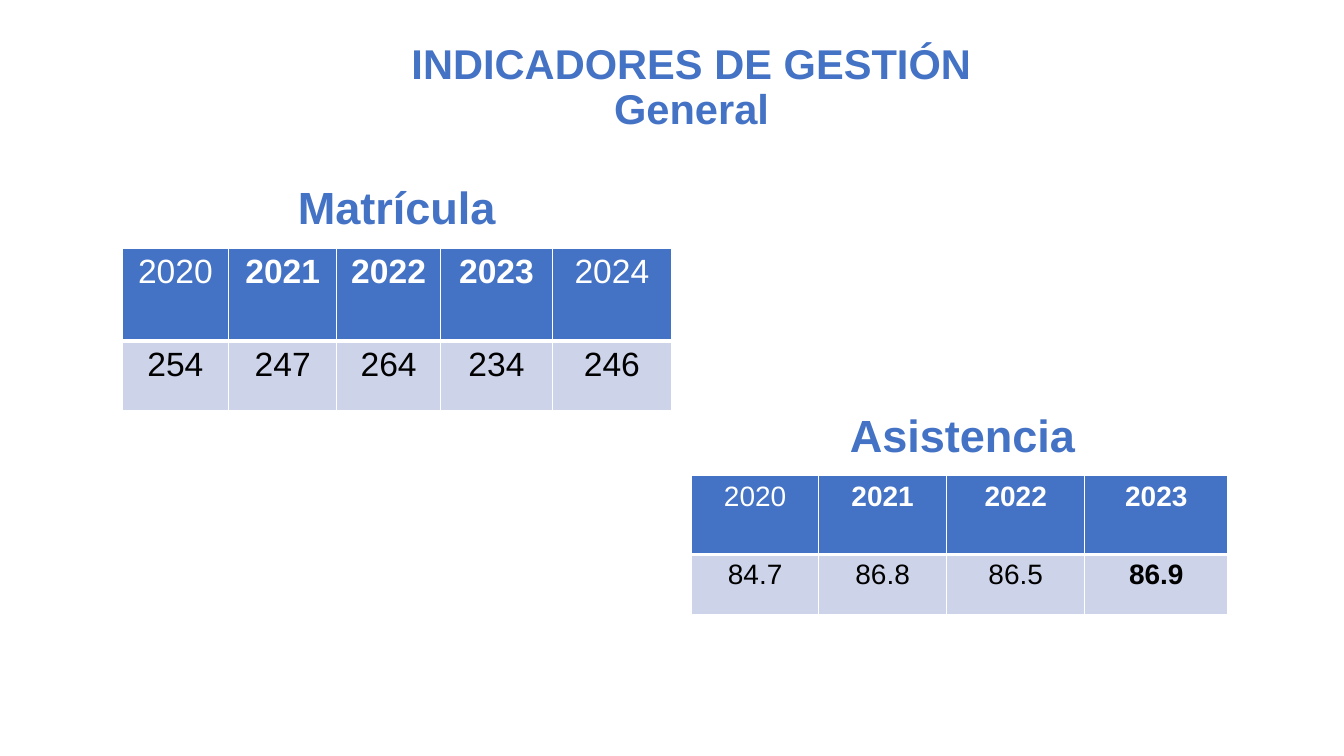
from dataclasses import dataclass

from lxml.etree import SubElement
from pptx import Presentation
from pptx.dml.color import RGBColor
from pptx.enum.text import MSO_ANCHOR as Anchor, MSO_AUTO_SIZE as AutoSize, PP_ALIGN as Align
from pptx.oxml.ns import qn
from pptx.util import Inches, Pt


@dataclass(frozen=True)
class Theme:
    font: str = "Arial"
    blue: str = "4472C4"
    pale: str = "CDD4EA"
    white: str = "FFFFFF"
    black: str = "000000"
    title_size: float = 29.7
    heading_size: float = 32.2
    thin: float = 1
    thick: float = 3


THEME = Theme()
TITLE = ["INDICADORES DE GESTIÓN", "General"]
HEADING_WIDTH, HEADING_HEIGHT, HEADING_RISE = 2.69, 0.55, 0.65
INDICATORS = [
    {
        "heading": "Asistencia", "heading_left": 8.2, "left": 6.86, "top": 4.72, "size": 20,
        "columns": [1.26, 1.27, 1.37, 1.42], "rows": [0.78, 0.6],
        "values": [["2020", "2021", "2022", "2023"], ["84.7", "86.8", "86.5", "86.9"]],
        "bold": {"2021", "2022", "2023", "86.9"},
    },
    {
        "heading": "Matrícula", "heading_left": 2.59, "left": 1.21, "top": 2.46, "size": 24,
        "columns": [1.06, 1.07, 1.03, 1.11, 1.18], "rows": [0.92, 0.69],
        "values": [["2020", "2021", "2022", "2023", "2024"], ["254", "247", "264", "234", "246"]],
        "bold": {"2021", "2022", "2023"},
    },
]


def write(para, lines, size, color, bold=True, spacing=None):
    para.alignment = Align.CENTER
    if spacing:
        para.line_spacing = spacing
    for index, line in enumerate(lines):
        if index:
            para.add_line_break()
        span = para.add_run()
        span.text = line
        span.font.name = THEME.font
        span.font.size = Pt(size)
        span.font.bold = bold
        span.font.color.rgb = RGBColor.from_string(color)


def prepare(frame, bottom):
    frame.word_wrap = True
    frame.auto_size = AutoSize.NONE
    frame.vertical_anchor = Anchor.BOTTOM
    frame.margin_left = frame.margin_right = Inches(0.1)
    frame.margin_top, frame.margin_bottom = Inches(0.05), Inches(bottom)


def draw_borders(cell, is_header):
    widths = {
        "a:lnL": THEME.thin,
        "a:lnR": THEME.thin,
        "a:lnT": THEME.thin if is_header else THEME.thick,
        "a:lnB": THEME.thick if is_header else THEME.thin,
    }
    properties = cell._tc.get_or_add_tcPr()
    for tag, width in widths.items():
        line = SubElement(properties, qn(tag), w=str(Pt(width)))
        fill = SubElement(line, qn("a:solidFill"))
        SubElement(fill, qn("a:srgbClr"), val=THEME.white)


def add_title(page):
    title = page.shapes.title
    title.left, title.top = Inches(1.11), Inches(0.93)
    title.width, title.height = Inches(11.5), Inches(0.97)
    prepare(title.text_frame, bottom=0.58)
    write(title.text_frame.paragraphs[0], TITLE, THEME.title_size, THEME.blue, spacing=0.9)


def add_heading(page, item):
    box = page.shapes.add_textbox(
        Inches(item["heading_left"]), Inches(item["top"] - HEADING_RISE),
        Inches(HEADING_WIDTH), Inches(HEADING_HEIGHT))
    prepare(box.text_frame, bottom=0.05)
    write(box.text_frame.paragraphs[0], [item["heading"]], THEME.heading_size, THEME.blue, spacing=0.8)


def add_indicator_table(page, item):
    columns, rows = item["columns"], item["rows"]
    table = page.shapes.add_table(
        len(rows), len(columns), Inches(item["left"]), Inches(item["top"]),
        Inches(sum(columns)), Inches(sum(rows))).table
    for column, width in zip(table.columns, columns):
        column.width = Inches(width)
    for row_index, (row, height) in enumerate(zip(table.rows, rows)):
        row.height = Inches(height)
        is_header = row_index == 0
        for cell, value in zip(row.cells, item["values"][row_index]):
            draw_borders(cell, is_header)
            cell.fill.solid()
            cell.fill.fore_color.rgb = RGBColor.from_string(THEME.blue if is_header else THEME.pale)
            write(cell.text_frame.paragraphs[0], [value], item["size"],
                  THEME.white if is_header else THEME.black, bold=value in item["bold"])


def main():
    """Build the slide of management indicators."""
    deck = Presentation()
    deck.slide_width, deck.slide_height = Inches(13.33), Inches(7.5)
    page = deck.slides.add_slide(deck.slide_layouts[5])
    add_title(page)
    for item in INDICATORS:
        add_indicator_table(page, item)
        add_heading(page, item)
    deck.save("out.pptx")


if __name__ == "__main__":
    main()
